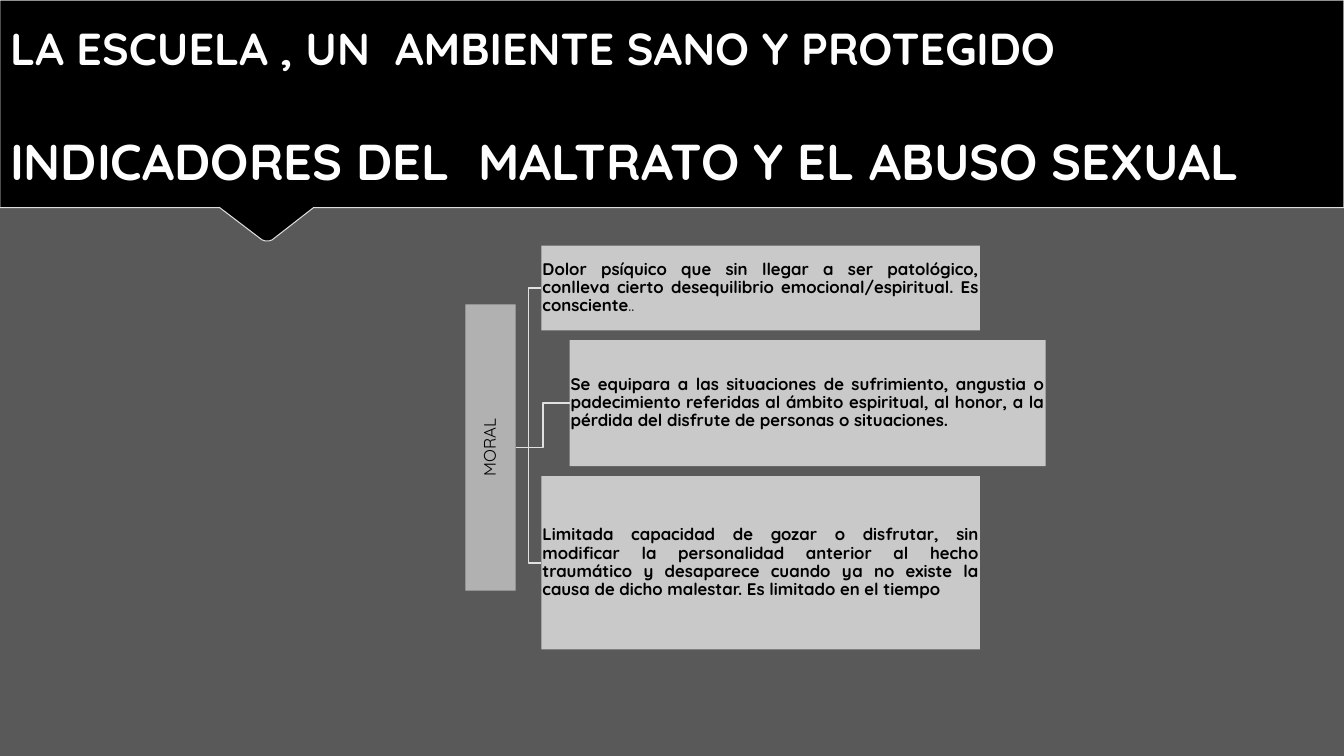
from lxml.etree import SubElement
from pptx import Presentation
from pptx.dml.color import RGBColor
from pptx.enum.shapes import MSO_CONNECTOR as Connector, MSO_SHAPE as Shape
from pptx.enum.text import MSO_ANCHOR as Anchor, MSO_AUTO_SIZE as AutoSize, PP_ALIGN as Align
from pptx.oxml.ns import qn
from pptx.util import Inches, Pt

WIDTH, HEIGHT = Inches(13.33), Inches(7.5)
BACKDROP = RGBColor(0x59, 0x59, 0x59)
BLACK = RGBColor(0, 0, 0)
WHITE = RGBColor(0xFE, 0xFE, 0xFE)
BANNER_EDGE = RGBColor(0xDD, 0xDD, 0xDD)
BRANCH = RGBColor(0xE1, 0xE1, 0xE1)
ROOT_FILL = RGBColor(0xB1, 0xB1, 0xB1)
CARD_FILL = RGBColor(0xC9, 0xC9, 0xC9)

BANNER_OUTLINE = [
    (0, 0), (0, 27.47), (16.35, 27.47), (19.5, 31.73), (19.7, 31.85),
    (19.88, 31.87), (20.06, 31.85), (20.25, 31.73), (23.33, 27.47),
    (100, 27.47), (100, 0),
]
HEADING = [("LA ESCUELA , UN  AMBIENTE SANO Y PROTEGIDO", 32, True)]
SUBJECT = [("INDICADORES DEL  MALTRATO Y EL ABUSO SEXUAL", 36, True)]
HEADING_GAP = Pt(40)
NEAR, FAR = (40.29, 32.63), (42.39, 35.41)
CARDS = [
    (NEAR, 11.2, [
        ("Dolor psíquico que sin llegar a ser patológico, conlleva cierto "
         "desequilibrio emocional/espiritual. Es consciente", 12, True),
        ("..", 12, False)]),
    (FAR, 16.67, [
        ("Se equipara a las situaciones de sufrimiento, angustia o padecimiento "
         "referidas al ámbito espiritual, al honor, a la pérdida del disfrute "
         "de personas o situaciones.", 12, True)]),
    (NEAR, 22.93, [
        ("Limitada capacidad de gozar o disfrutar, sin modificar la personalidad "
         "anterior al hecho traumático y desaparece cuando ya no existe la causa "
         "de dicho malestar. Es limitado en el tiempo", 12, True)]),
]
CARDS_TOP, CARD_GAP = 32.5, 1.3
ROOT_LEFT, ROOT_WIDTH, ROOT_HEIGHT = 34.62, 3.75, 37.87


def across(share):
    return round(WIDTH * share / 100)


def down(share):
    return round(HEIGHT * share / 100)


def apply(target, formats):
    for name, value in formats.items():
        setattr(target, name, value)


def write(paragraph, pieces, color, formats):
    apply(paragraph, formats)
    for words, size, bold in pieces:
        run = paragraph.add_run()
        run.text = words
        apply(run.font, {"name": "Quicksand", "size": Pt(size), "bold": bold})
        run.font.color.rgb = color


def add_banner(slide):
    corners = [(across(x), down(y)) for x, y in BANNER_OUTLINE]
    builder = slide.shapes.build_freeform(*corners[0])
    builder.add_line_segments(corners[1:], close=True)
    banner = builder.convert_to_shape()
    banner.shadow.inherit = False
    banner.fill.solid()
    banner.fill.fore_color.rgb = BLACK
    banner.line.color.rgb = BANNER_EDGE
    banner.line.width = Pt(0.75)


def place_title(slide):
    title = slide.shapes.title
    apply(title, {"left": 0, "top": down(2.27), "width": WIDTH, "height": down(23.6)})
    frame = title.text_frame
    apply(frame, {"word_wrap": True, "auto_size": AutoSize.NONE,
                  "vertical_anchor": Anchor.BOTTOM})
    formats = {"alignment": Align.LEFT, "line_spacing": 1.0}
    write(frame.paragraphs[0], HEADING, WHITE, formats)
    write(frame.add_paragraph(), SUBJECT, WHITE, {**formats, "space_before": HEADING_GAP})
    slide.shapes._spTree.append(title._element)


def add_panel(slide, left, top, width, height, fill, pieces, align):
    panel = slide.shapes.add_shape(
        Shape.RECTANGLE, across(left), down(top), across(width), down(height))
    panel.shadow.inherit = False
    panel.fill.solid()
    panel.fill.fore_color.rgb = fill
    panel.line.fill.background()
    margins = {f"margin_{side}": Inches(0.01)
               for side in ("left", "top", "right", "bottom")}
    frame = panel.text_frame
    apply(frame, {"word_wrap": True, "auto_size": AutoSize.NONE,
                  "vertical_anchor": Anchor.MIDDLE, **margins})
    write(frame.paragraphs[0], pieces, BLACK, {"alignment": align, "line_spacing": 0.9})
    return panel


def add_branch(slide, root, card):
    branch = slide.shapes.add_connector(Connector.ELBOW, 0, 0, 0, 0)
    branch.begin_connect(root, 3)
    branch.end_connect(card, 1)
    branch.line.color.rgb = BRANCH
    branch.line.width = Pt(1.25)
    SubElement(branch._element.spPr, qn("a:effectLst"))


def add_tree(slide):
    stack = sum(height for _, height, _ in CARDS) + CARD_GAP * (len(CARDS) - 1)
    root_top = CARDS_TOP + (stack - ROOT_HEIGHT) / 2
    root = add_panel(slide, ROOT_LEFT, root_top, ROOT_WIDTH, ROOT_HEIGHT,
                     ROOT_FILL, [("MORAL", 12, False)], Align.CENTER)
    root.text_frame._txBody.bodyPr.set("vert", "vert270")
    top = CARDS_TOP
    for (left, width), height, pieces in CARDS:
        card = add_panel(slide, left, top, width, height,
                         CARD_FILL, pieces, Align.JUSTIFY)
        add_branch(slide, root, card)
        top += height + CARD_GAP


def main():
    deck = Presentation()
    apply(deck, {"slide_width": WIDTH, "slide_height": HEIGHT})
    slide = deck.slides.add_slide(deck.slide_layouts[5])
    slide.background.fill.solid()
    slide.background.fill.fore_color.rgb = BACKDROP
    add_banner(slide)
    place_title(slide)
    add_tree(slide)
    deck.save("out.pptx")


if __name__ == "__main__":
    main()
